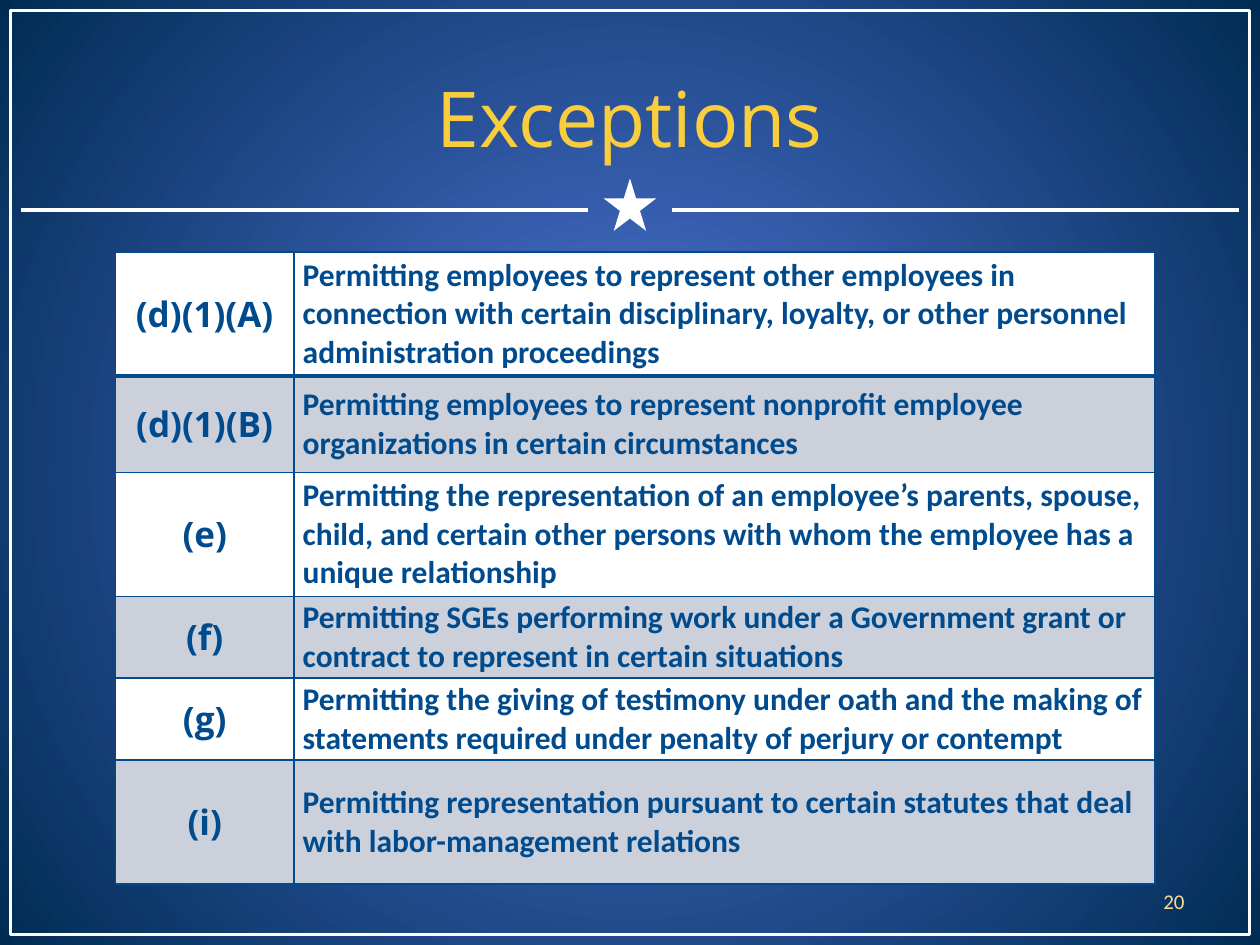
from dataclasses import dataclass

from lxml.etree import SubElement
from pptx import Presentation
from pptx.dml.color import RGBColor
from pptx.enum.shapes import MSO_CONNECTOR, MSO_SHAPE
from pptx.enum.text import MSO_ANCHOR, PP_ALIGN
from pptx.oxml.ns import qn
from pptx.util import Inches, Pt


@dataclass(frozen=True)
class Theme:
    glow: str = "5176DA"
    edge: str = "002C54"
    white: str = "FFFFFF"
    band: str = "CCD0DB"
    ink: str = "004B8D"
    gold: str = "F9CD3D"
    pale_gold: str = "FBDB92"
    heading_font: str = "Open Sans"
    body_font: str = "Calibri"
    title_size: int = 44
    label_size: int = 20
    body_size: int = 18
    number_size: int = 12
    rule_width: int = 2
    border_width: int = 1
    heavy_border: int = 3


EXCEPTIONS = [  # label, wording, row height in grid rows
    ("(d)(1)(A)", "Permitting employees to represent other employees in connection with certain "
     "disciplinary, loyalty, or other personnel administration proceedings", 11.8),
    ("(d)(1)(B)", "Permitting employees to represent nonprofit employee organizations "
     "in certain circumstances", 9.2),
    ("(e)", "Permitting the representation of an employee’s parents, spouse, child, and certain "
     "other persons with whom the employee has a unique relationship", 11.8),
    ("(f)", "Permitting SGEs performing work under a Government grant or contract "
     "to represent in certain situations", 7.8),
    ("(g)", "Permitting the giving of testimony under oath and the making of statements "
     "required under penalty of perjury or contempt", 7.8),
    ("(i)", "Permitting representation pursuant to certain statutes that deal "
     "with labor-management relations", 11.8),
]


def grid(*cells):
    """Turn columns and rows of a 120 by 90 grid into lengths."""
    return [Inches(cell / 12) for cell in cells]


def color(value):
    return RGBColor.from_string(value)


class SlideBuilder:
    def __init__(self, slide, theme):
        self.slide = slide
        self.theme = theme

    def background(self):
        """Fill the slide with a glow that darkens from its centre."""
        fill = self.slide.background.fill
        fill.gradient()
        for stop, value in zip(fill.gradient_stops, (self.theme.glow, self.theme.edge)):
            stop.color.rgb = color(value)
        linear = next(self.slide.element.iter(qn("a:lin")))
        gradient = linear.getparent()
        gradient.remove(linear)
        circle = SubElement(gradient, qn("a:path"), {"path": "circle"})
        SubElement(circle, qn("a:fillToRect"), dict.fromkeys("ltrb", "50000"))

    def rule(self, start, end, row):
        line = self.slide.shapes.add_connector(MSO_CONNECTOR.STRAIGHT, *grid(start, row, end, row))
        line.line.color.rgb = color(self.theme.white)
        line.line.width = Pt(self.theme.rule_width)
        SubElement(line.element.spPr, qn("a:effectLst"))

    def star(self, *box):
        shape = self.slide.shapes.add_shape(MSO_SHAPE.STAR_5_POINT, *grid(*box))
        shape.shadow.inherit = False
        shape.fill.solid()
        shape.fill.fore_color.rgb = color(self.theme.white)
        shape.line.fill.background()

    def frame(self, *box):
        shape = self.slide.shapes.add_shape(MSO_SHAPE.RECTANGLE, *grid(*box))
        shape.shadow.inherit = False
        shape.fill.background()
        shape.line.color.rgb = color(self.theme.white)
        shape.line.width = Pt(self.theme.rule_width)

    def set_text(self, text_frame, text, font_name, size, value, align, bold=False):
        text_frame.word_wrap = True
        paragraph = text_frame.paragraphs[0]
        paragraph.text = text
        paragraph.alignment = align
        font = paragraph.font
        font.name, font.size, font.bold = font_name, Pt(size), bold
        font.color.rgb = color(value)

    def text(self, box, *style):
        text_frame = self.slide.shapes.add_textbox(*grid(*box)).text_frame
        text_frame.vertical_anchor = MSO_ANCHOR.MIDDLE
        self.set_text(text_frame, *style)

    def cell(self, cell, fill, top, bottom):
        """Give a table cell its borders, fill and margins."""
        properties = cell._tc.get_or_add_tcPr()
        thin = self.theme.border_width
        for side, width in (("L", thin), ("R", thin), ("T", top), ("B", bottom)):
            line = SubElement(properties, qn(f"a:ln{side}"), {"w": str(int(Pt(width)))})
            solid = SubElement(line, qn("a:solidFill"))
            SubElement(solid, qn("a:srgbClr"), {"val": self.theme.ink})
        cell.fill.solid()
        cell.fill.fore_color.rgb = color(fill)
        cell.margin_left = cell.margin_right = Inches(0.07)
        cell.margin_top = cell.margin_bottom = 0
        cell.vertical_anchor = MSO_ANCHOR.MIDDLE

    def table(self, left, top, column_widths, entries):
        theme = self.theme
        height = sum(entry[2] for entry in entries)
        table = self.slide.shapes.add_table(
            len(entries), len(column_widths), *grid(left, top, sum(column_widths), height)).table
        for column, width in zip(table.columns, grid(*column_widths)):
            column.width = width
        styles = [
            (theme.heading_font, theme.label_size, theme.ink, PP_ALIGN.CENTER, True),
            (theme.body_font, theme.body_size, theme.ink, PP_ALIGN.LEFT, True),
        ]
        for index, (label, wording, row_height) in enumerate(entries):
            table.rows[index].height = grid(row_height)[0]
            fill = theme.band if index % 2 else theme.white
            above = theme.heavy_border if index == 1 else theme.border_width
            below = theme.heavy_border if index == 0 else theme.border_width
            for cell, text, style in zip(table.rows[index].cells, (label, wording), styles):
                self.cell(cell, fill, above, below)
                self.set_text(cell.text_frame, text, *style)


def main():
    presentation = Presentation()
    presentation.slide_width, presentation.slide_height = grid(120, 90)
    theme = Theme()
    builder = SlideBuilder(presentation.slides.add_slide(presentation.slide_layouts[6]), theme)
    builder.background()
    builder.rule(2, 56, 20)
    builder.star(57.5, 17, 5, 5)
    builder.rule(64, 118, 20)
    builder.frame(1, 1, 118, 88)
    builder.text((6, 3.6, 108, 15), "Exceptions", theme.heading_font, theme.title_size,
                 theme.gold, PP_ALIGN.CENTER)
    builder.text((86, 83.4, 28, 4.8), "20", theme.body_font, theme.number_size,
                 theme.pale_gold, PP_ALIGN.RIGHT)
    builder.table(11, 24, (17, 82), EXCEPTIONS)
    presentation.save("out.pptx")


if __name__ == "__main__":
    main()
